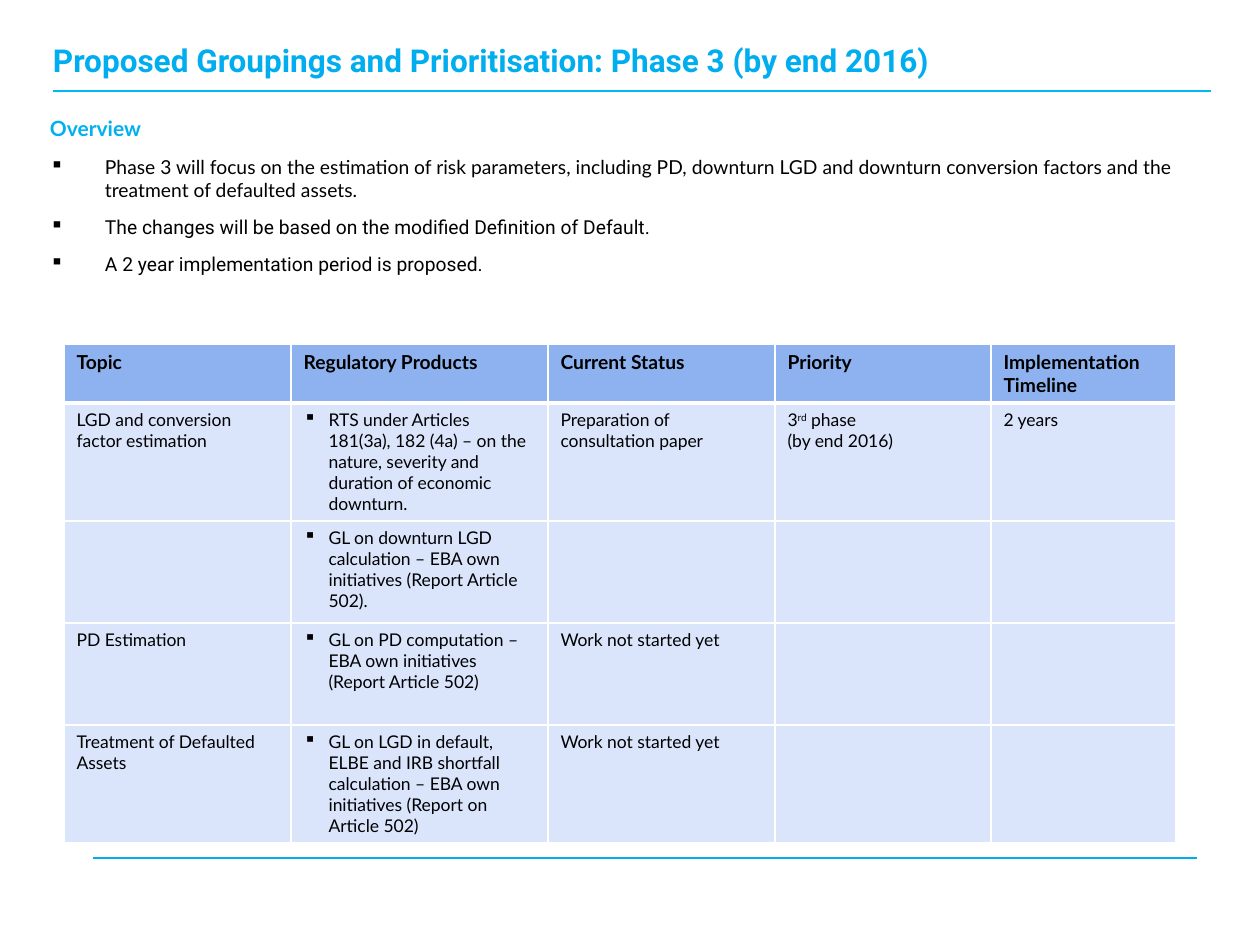
from dataclasses import dataclass

from lxml import etree
from pptx import Presentation
from pptx.dml.color import RGBColor
from pptx.enum.shapes import MSO_CONNECTOR
from pptx.enum.text import MSO_ANCHOR
from pptx.oxml.ns import qn
from pptx.util import Pt

PX = 914400 / 126
STRAIGHT = MSO_CONNECTOR.STRAIGHT
MIDDLE = MSO_ANCHOR.MIDDLE


@dataclass(frozen=True)
class Theme:
    title: str = "00AEEF"
    overview: str = "00B0F0"
    title_rule: str = "00B9F1"
    text: str = "000000"
    header: str = "8DB2EF"
    body: str = "DAE5FC"
    border: str = "FFFFFF"
    lato: str = "Lato"
    roboto: str = "Roboto"
    title_size: int = 18
    overview_size: int = 12
    text_size: int = 11
    cell_size: int = 10


T = Theme()


def px(n):
    return round(n * PX)


def write(tf, text, *, size, font=T.lato, color=T.text, bold=False,
          bullet=False, indent=0, before=0, after=0, new=False):
    """Write one paragraph per line of text; ^...^ marks superscript."""
    for i, line in enumerate(text.split("\n")):
        p = tf.add_paragraph() if new or i else tf.paragraphs[0]
        p.space_before, p.space_after = Pt(before), Pt(after)
        pPr = p._p.get_or_add_pPr()
        if indent:
            pPr.set("marL", str(px(indent)))
            pPr.set("indent", str(-px(indent)))
        if bullet:
            clr = etree.SubElement(pPr, qn("a:buClr"))
            etree.SubElement(clr, qn("a:srgbClr"), val=T.text)
            etree.SubElement(pPr, qn("a:buChar"), char="▪")
        for j, part in enumerate(line.split("^")):
            r = p.add_run()
            r.text = part
            r.font.size, r.font.name, r.font.bold = Pt(size), font, bold
            r.font.color.rgb = RGBColor.from_string(color)
            if j % 2:
                r._r.get_or_add_rPr().set("baseline", "30000")


prs = Presentation()
prs.slide_width, prs.slide_height = px(1260), px(945)
s = prs.slides.add_slide(prs.slide_layouts[6])

# Rules below the title and above the footer
for x1, x2, y, color, width in [(93, 1197, 858, T.title, 1),
                                (53, 1211, 91, T.title_rule, 1.5)]:
    line = s.shapes.add_connector(STRAIGHT, px(x1), px(y), px(x2), px(y))
    line.line.color.rgb = RGBColor.from_string(color)
    line.line.width = Pt(width)
    etree.SubElement(line._element.spPr, qn("a:effectLst"))

# Title and overview text
frames = []
for box in [(53, 40, 1188, 39), (50, 116, 1158, 200)]:
    tf = s.shapes.add_textbox(*map(px, box)).text_frame
    tf.word_wrap = True
    tf.margin_left = tf.margin_right = tf.margin_top = tf.margin_bottom = 0
    frames.append(tf)
title, overview = frames

title.vertical_anchor = MIDDLE
write(title, "Proposed Groupings and Prioritisation: Phase 3 (by end 2016)",
      size=T.title_size, font=T.roboto, color=T.title, bold=True)

write(overview, "Overview", size=T.overview_size, color=T.overview, bold=True,
      indent=55, after=2.6)
for text, font in [
    ("Phase 3 will focus on the estimation of risk parameters, including PD, "
     "downturn LGD and downturn conversion factors and the treatment of "
     "defaulted assets.", T.lato),
    ("The changes will be based on the modified Definition of Default.", T.roboto),
    ("A 2 year implementation period is proposed.", T.roboto),
]:
    write(overview, text, size=T.text_size, font=font, bullet=True,
          indent=55, before=5.3, after=2.6, new=True)

# Table of topics
rows = [
    ["Topic", "Regulatory Products", "Current Status", "Priority",
     "Implementation Timeline"],
    ["LGD and conversion factor estimation",
     "RTS under Articles 181(3a), 182 (4a) – on the nature, severity and "
     "duration of economic downturn.",
     "Preparation of consultation paper", "3^rd^ phase\n(by end 2016)", "2 years"],
    ["", "GL on downturn LGD calculation – EBA own initiatives "
     "(Report Article 502).", "", "", ""],
    ["PD Estimation", "GL on PD computation – EBA own initiatives "
     "(Report Article 502)", "Work not started yet", "", ""],
    ["Treatment of Defaulted Assets",
     "GL on LGD in default, ELBE and IRB shortfall calculation – EBA own "
     "initiatives (Report on Article 502)", "Work not started yet", "", ""],
]
col_widths = [227, 257, 227, 216, 185]
row_heights = [59] + [102] * 4
table = s.shapes.add_table(len(rows), len(col_widths), px(64), px(344),
                           px(sum(col_widths)), px(sum(row_heights))).table
table.horz_banding = False
for col, width in zip(table.columns, col_widths):
    col.width = px(width)
for row, height in zip(table.rows, row_heights):
    row.height = px(height)

for i, row in enumerate(rows):
    header = i == 0
    for j, text in enumerate(row):
        cell = table.cell(i, j)
        cell.fill.solid()
        cell.fill.fore_color.rgb = RGBColor.from_string(
            T.header if header else T.body)
        if text:
            listed = j == 1 and not header
            write(cell.text_frame, text, bold=header, bullet=listed,
                  size=T.text_size if header else T.cell_size,
                  indent=25 if listed else 0)
        tcPr = cell._tc.get_or_add_tcPr()
        for k, side in enumerate(["lnL", "lnR", "lnT", "lnB"]):
            thick = (i, side) in [(0, "lnB"), (1, "lnT")]
            ln = etree.Element(qn(f"a:{side}"), w=str(Pt(3 if thick else 1)))
            fill = etree.SubElement(ln, qn("a:solidFill"))
            etree.SubElement(fill, qn("a:srgbClr"), val=T.border)
            tcPr.insert(k, ln)

prs.save("out.pptx")
